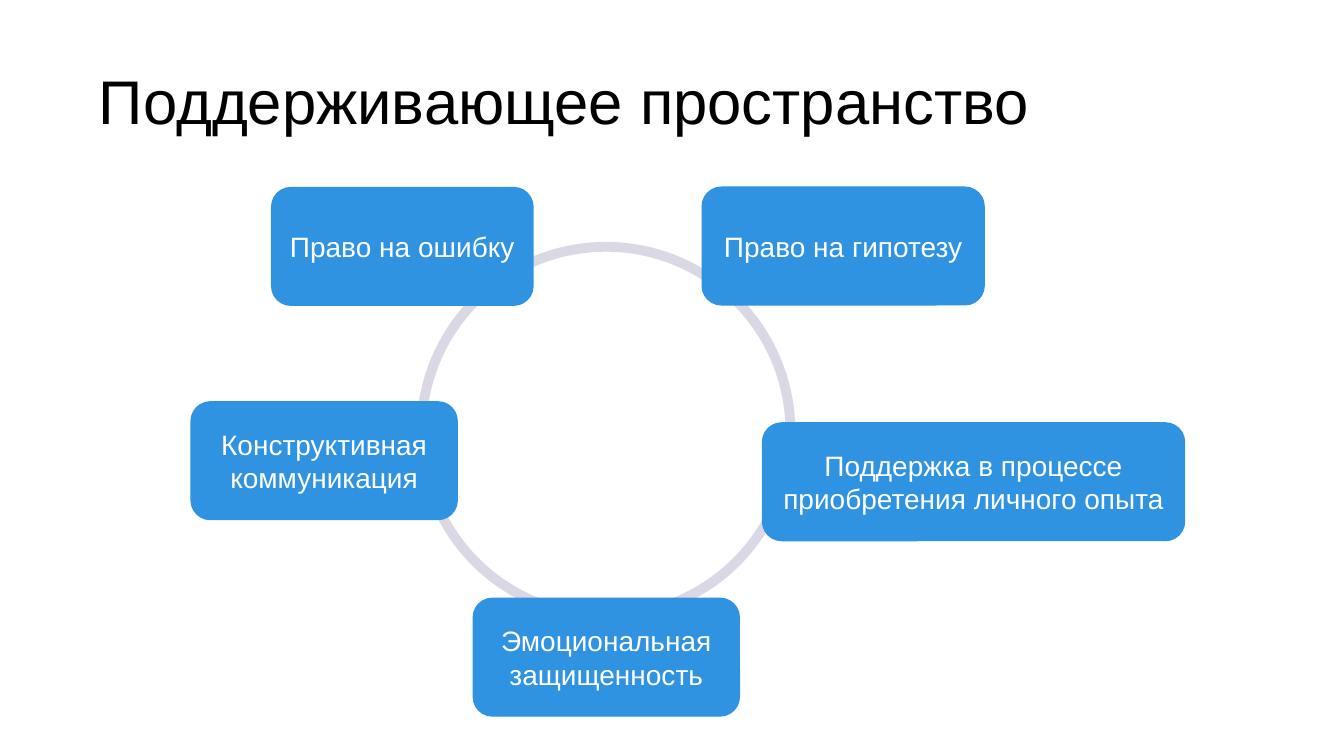
from dataclasses import dataclass

from pptx import Presentation
from pptx import util as u
from pptx.dml.color import RGBColor
from pptx.enum import shapes, text

TITLE = "Поддерживающее пространство"

# Clockwise around the ring: wording, left, top, width (cm)
PRINCIPLES = [
    ("Право на ошибку", 6.83, 4.71, 6.62),
    ("Право на гипотезу", 17.68, 4.7, 7.14),
    ("Поддержка в процессе приобретения личного опыта", 19.2, 10.64, 10.67),
    ("Эмоциональная защищенность", 11.91, 15.06, 6.74),
    ("Конструктивная коммуникация", 4.8, 10.11, 6.74),
]
CARD_HEIGHT = 3
RING_CENTER = (15.27, 10.87)
RING_DIAMETER = 9.3
TITLE_BOX = (2.24, 0.79, 29.21, 3.68)


@dataclass(frozen=True)
class Theme:
    font: str = "Arial"
    title_size: int = 44
    card_size: int = 20
    ring_width: int = 7
    title: str = "000000"
    card: str = "2F93E2"
    card_text: str = "FFFFFF"
    ring: str = "D9D8E4"


THEME = Theme()


def cm_box(*lengths):
    return [u.Cm(length) for length in lengths]


def write(frame, wording, size, color, align):
    frame.text = wording
    frame.word_wrap = True
    frame.vertical_anchor = text.MSO_ANCHOR.MIDDLE
    paragraph = frame.paragraphs[0]
    paragraph.alignment = align
    font = paragraph.runs[0].font
    font.name = THEME.font
    font.size = u.Pt(size)
    font.color.rgb = RGBColor.from_string(color)
    return paragraph


def add_title(slide):
    title = slide.shapes.title
    title.left, title.top, title.width, title.height = cm_box(*TITLE_BOX)
    heading = write(title.text_frame, TITLE, THEME.title_size, THEME.title,
                    text.PP_ALIGN.LEFT)
    heading.line_spacing = 0.9


def add_ring(slide):
    left, top = (center - RING_DIAMETER / 2 for center in RING_CENTER)
    ring = slide.shapes.add_shape(
        shapes.MSO_SHAPE.OVAL, *cm_box(left, top, RING_DIAMETER, RING_DIAMETER))
    ring.shadow.inherit = False
    ring.fill.background()
    ring.line.color.rgb = RGBColor.from_string(THEME.ring)
    ring.line.width = u.Pt(THEME.ring_width)


def add_card(slide, wording, left, top, width):
    card = slide.shapes.add_shape(
        shapes.MSO_SHAPE.ROUNDED_RECTANGLE, *cm_box(left, top, width, CARD_HEIGHT))
    card.shadow.inherit = False
    card.fill.solid()
    card.fill.fore_color.rgb = RGBColor.from_string(THEME.card)
    card.line.fill.background()
    write(card.text_frame, wording, THEME.card_size, THEME.card_text,
          text.PP_ALIGN.CENTER)


def main():
    deck = Presentation()
    deck.slide_width, deck.slide_height = cm_box(33.87, 19.05)
    title_only = deck.slide_layouts[5]
    slide = deck.slides.add_slide(title_only)
    add_title(slide)
    add_ring(slide)
    for principle in PRINCIPLES:
        add_card(slide, *principle)
    deck.save("out.pptx")


if __name__ == "__main__":
    main()
